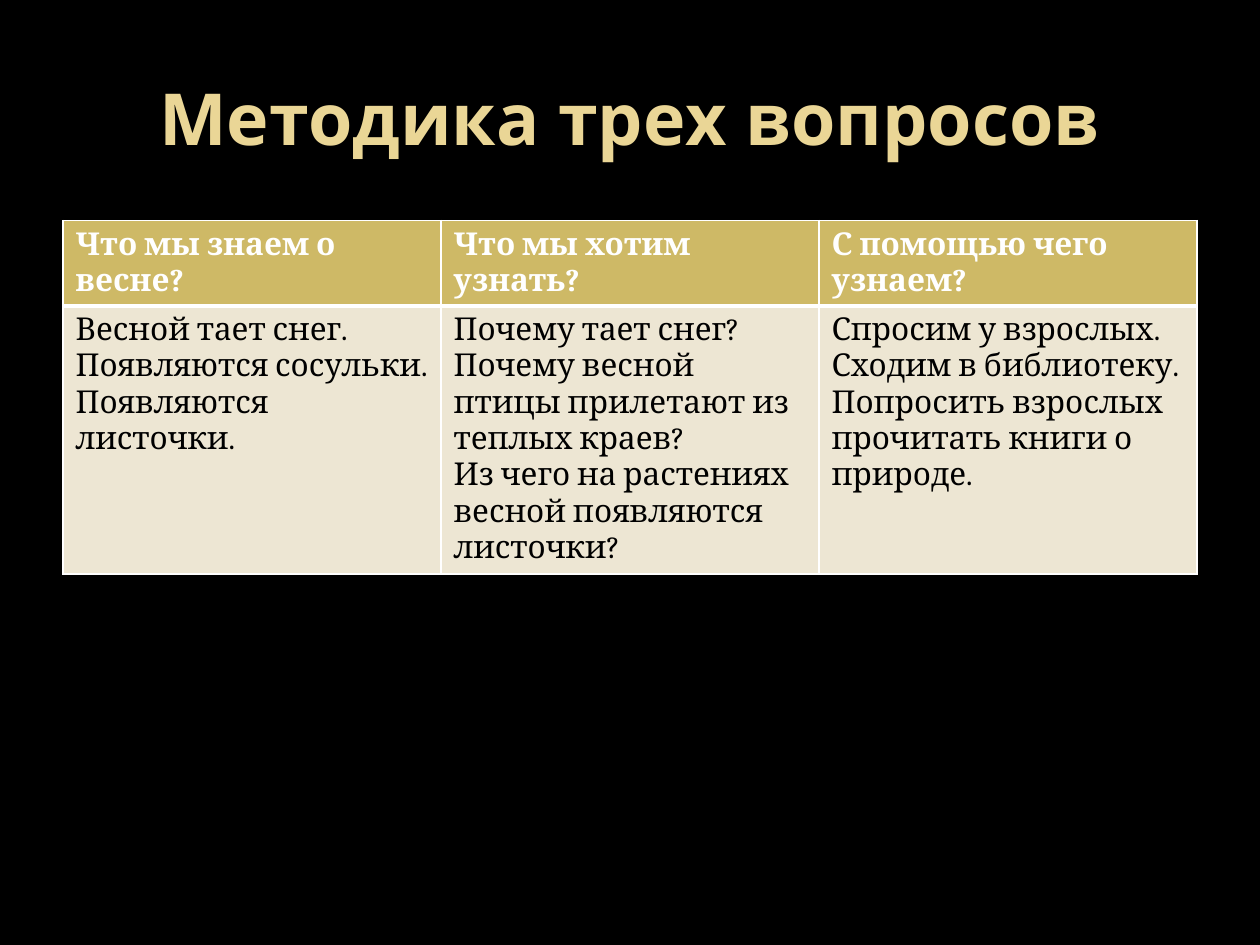
from dataclasses import dataclass

from lxml import etree
from pptx import Presentation
from pptx.dml.color import RGBColor
from pptx.enum.text import MSO_ANCHOR, PP_ALIGN
from pptx.oxml.ns import qn
from pptx.util import Inches, Pt

MIDDLE = MSO_ANCHOR.MIDDLE
CENTER = PP_ALIGN.CENTER
TITLE_ONLY = 5


@dataclass(frozen=True)
class Theme:
    back: str = "000000"
    gold: str = "EAD696"
    head: str = "CEB966"
    body: str = "EDE6D3"
    white: str = "FFFFFF"
    black: str = "000000"
    title_font: str = "Open Sans"
    text_font: str = "Cambria"
    title_size: int = 41
    text_size: int = 18
    thin: int = 1
    thick: int = 3


THEME = Theme()

# Slide grid, in inches
WIDE, HIGH = 10, 7.5
EDGE = WIDE * 0.05
SPAN = WIDE - 2 * EDGE
TITLE_TOP, TITLE_HIGH = HIGH * 0.04, 1.25
TABLE_TOP = 1.75
ROWS = (0.67, 2.13)

TITLE = "Методика трех вопросов"

# Each column: its question and the answers below it
COLUMNS = (
    ("Что мы знаем о весне?",
     ("Весной тает снег. Появляются сосульки.",
      "Появляются листочки.")),
    ("Что мы хотим узнать?",
     ("Почему тает снег?",
      "Почему весной птицы прилетают из теплых краев?",
      "Из чего на растениях весной появляются листочки?")),
    ("С помощью чего узнаем?",
     ("Спросим у взрослых.",
      "Сходим в библиотеку.",
      "Попросить взрослых прочитать книги о природе.")),
)


def add_run(para, text, font, size, color, bold):
    run = para.add_run()
    run.text = text
    run.font.name = font
    run.font.size = Pt(size)
    run.font.bold = bold
    run.font.color.rgb = RGBColor.from_string(color)


def add_title(slide):
    title = slide.shapes.title
    title.left, title.top = Inches(EDGE), Inches(TITLE_TOP)
    title.width, title.height = Inches(SPAN), Inches(TITLE_HIGH)
    frame = title.text_frame
    frame.vertical_anchor = MIDDLE
    para = frame.paragraphs[0]
    para.alignment = CENTER
    add_run(para, TITLE, THEME.title_font, THEME.title_size, THEME.gold, True)


def set_lines(cell, top, bottom):
    """Draw the four cell borders; they stand before the fill in the XML."""
    props = cell._tc.get_or_add_tcPr()
    widths = {"L": THEME.thin, "R": THEME.thin, "T": top, "B": bottom}
    for spot, (side, width) in enumerate(widths.items()):
        line = etree.Element(qn(f"a:ln{side}"), w=str(Pt(width)))
        fill = etree.SubElement(line, qn("a:solidFill"))
        etree.SubElement(fill, qn("a:srgbClr"), val=THEME.white)
        props.insert(spot, line)


def fill_cell(cell, lines, is_head):
    cell.fill.solid()
    shade = THEME.head if is_head else THEME.body
    cell.fill.fore_color.rgb = RGBColor.from_string(shade)
    ink = THEME.white if is_head else THEME.black
    frame = cell.text_frame
    for spot, text in enumerate(lines):
        para = frame.add_paragraph() if spot else frame.paragraphs[0]
        add_run(para, text, THEME.text_font, THEME.text_size, ink, is_head)
    # The heavy rule runs between the header and the body
    if is_head:
        set_lines(cell, THEME.thin, THEME.thick)
    else:
        set_lines(cell, THEME.thick, THEME.thin)


def add_grid(slide):
    table = slide.shapes.add_table(
        len(ROWS), len(COLUMNS), Inches(EDGE), Inches(TABLE_TOP),
        Inches(SPAN), Inches(sum(ROWS))).table
    table.horz_banding = False
    for row, height in zip(table.rows, ROWS):
        row.height = Inches(height)
    for col, (question, answers) in enumerate(COLUMNS):
        table.columns[col].width = Inches(SPAN / len(COLUMNS))
        fill_cell(table.cell(0, col), (question,), True)
        fill_cell(table.cell(1, col), answers, False)


def main():
    deck = Presentation()
    deck.slide_width, deck.slide_height = Inches(WIDE), Inches(HIGH)
    slide = deck.slides.add_slide(deck.slide_layouts[TITLE_ONLY])
    back = slide.background.fill
    back.solid()
    back.fore_color.rgb = RGBColor.from_string(THEME.back)
    add_title(slide)
    add_grid(slide)
    deck.save("out.pptx")


if __name__ == "__main__":
    main()
